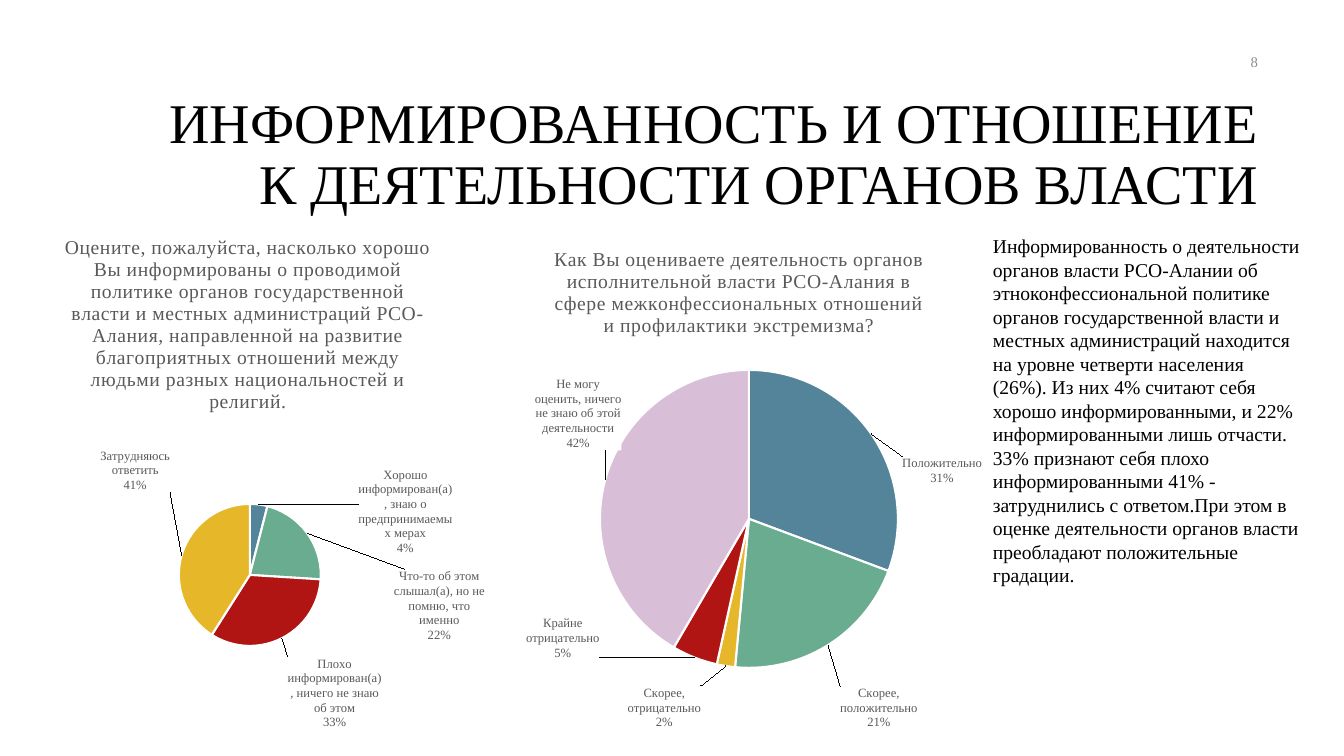
"""Builds the slide on awareness of and attitudes to public authorities."""
from copy import deepcopy
from dataclasses import dataclass

from lxml import etree
from pptx import Presentation
from pptx.chart.data import CategoryChartData
from pptx.dml.color import RGBColor
from pptx.enum.chart import XL_CHART_TYPE, XL_LABEL_POSITION
from pptx.enum.text import MSO_ANCHOR, MSO_AUTO_SIZE, PP_ALIGN
from pptx.oxml import parse_xml
from pptx.oxml.ns import nsdecls, qn
from pptx.util import Pt

EMU_PER_PX = 12192000 / 1344
FONT_NAME = "Times New Roman"
PIE = XL_CHART_TYPE.PIE
OUTSIDE_END = XL_LABEL_POSITION.OUTSIDE_END
RIGHT, CENTER, LEFT = PP_ALIGN.RIGHT, PP_ALIGN.CENTER, PP_ALIGN.LEFT
MIDDLE, TOP = MSO_ANCHOR.MIDDLE, MSO_ANCHOR.TOP
NO_AUTO_SIZE = MSO_AUTO_SIZE.NONE

BLACK = RGBColor(0x00, 0x00, 0x00)
WHITE = RGBColor(0xFF, 0xFF, 0xFF)
GRAY = RGBColor(0x8C, 0x8C, 0x8C)
DARK_GRAY = RGBColor(0x59, 0x59, 0x59)
BLUE = RGBColor(0x54, 0x84, 0x9A)
GREEN = RGBColor(0x6A, 0xAC, 0x90)
RED = RGBColor(0xB0, 0x15, 0x13)
YELLOW = RGBColor(0xE6, 0xB7, 0x29)
LILAC = RGBColor(0xD9, 0xBE, 0xD7)


@dataclass(frozen=True)
class Box:
    """A rectangle in px."""
    left: int
    top: int
    width: int
    height: int

    def emu(self) -> list[int]:
        """Return the rectangle in EMU."""
        return [px(value) for value in (self.left, self.top, self.width, self.height)]


@dataclass(frozen=True)
class Slice:
    """One answer, with the shift of its label in px."""
    answer: str
    percent: int
    color: RGBColor
    shift_x: int
    shift_y: int


@dataclass(frozen=True)
class Survey:
    """A survey question shown as a pie."""
    question: str
    box: Box
    pie: Box
    slices: tuple[Slice, ...]


@dataclass(frozen=True)
class Caption:
    """A formatted text with its place."""
    text: str
    box: Box
    size: float
    color: RGBColor
    alignment: PP_ALIGN
    anchor: MSO_ANCHOR
    line_spacing: float = 1.0


TITLE = Caption("ИНФОРМИРОВАННОСТЬ И ОТНОШЕНИЕ К ДЕЯТЕЛЬНОСТИ ОРГАНОВ ВЛАСТИ",
                Box(130, 85, 1138, 142), 40, BLACK, RIGHT, MIDDLE, 0.9)
CAPTIONS = (
    Caption("8", Box(966, 42, 302, 40), 10.5, GRAY, RIGHT, MIDDLE),
    Caption("Информированность о деятельности органов власти РСО-Алании об "
            "этноконфессиональной политике органов государственной власти и местных "
            "администраций находится на уровне четверти населения (26%). Из них 4% "
            "считают себя хорошо информированными, и 22% информированными лишь "
            "отчасти. 33% признают себя плохо информированными 41% - затруднились с "
            "ответом.При этом в оценке деятельности органов власти преобладают "
            "положительные градации.",
            Box(983, 229, 328, 367), 14, BLACK, LEFT, TOP),
)
SURVEYS = (
    Survey("Оцените, пожалуйста, насколько хорошо Вы информированы о проводимой "
           "политике органов государственной власти и местных администраций "
           "РСО-Алания, направленной на развитие благоприятных отношений между "
           "людьми разных национальностей и религий.",
           Box(11, 215, 474, 516), Box(179, 504, 142, 142), (
               Slice("Хорошо информирован(а), знаю о предпринимаемых мерах", 4, BLUE, 99, 57),
               Slice("Что-то об этом слышал(а), но не помню, что именно", 22, GREEN, 93, 113),
               Slice("Плохо информирован(а), ничего не знаю об этом", 33, RED, 3, 13),
               Slice("Затрудняюсь ответить", 41, YELLOW, -6, -61))),
    Survey("Как Вы оцениваете деятельность органов исполнительной власти РСО-Алания "
           "в сфере межконфессиональных отношений и профилактики экстремизма?",
           Box(495, 227, 488, 504), Box(600, 370, 298, 298), (
               Slice("Положительно", 31, BLUE, 26, 55),
               Slice("Скорее, положительно", 21, GREEN, 9, 36),
               Slice("Скорее, отрицательно", 2, YELLOW, -24, 14),
               Slice("Крайне отрицательно", 5, RED, -93, -47),
               Slice("Не могу оценить, ничего не знаю об этой деятельности",
                     42, LILAC, 22, -28))),
)


def px(value: int) -> int:
    """Turn px into EMU."""
    return round(value * EMU_PER_PX)


def set_attributes(target, values: dict) -> None:
    """Set each named attribute of the target."""
    for name, value in values.items():
        setattr(target, name, value)


def format_font(font, size: float, color: RGBColor) -> None:
    """Give a font its face, size and colour."""
    set_attributes(font, {"name": FONT_NAME, "size": Pt(size), "bold": False})
    font.color.rgb = color


def write_caption(shape, caption: Caption) -> None:
    """Place a shape and fill it with formatted text."""
    shape.left, shape.top, shape.width, shape.height = caption.box.emu()
    frame = shape.text_frame
    set_attributes(frame, {"word_wrap": True, "auto_size": NO_AUTO_SIZE,
                           "vertical_anchor": caption.anchor})
    paragraph = frame.paragraphs[0]
    set_attributes(paragraph, {"alignment": caption.alignment,
                               "line_spacing": caption.line_spacing})
    run = paragraph.add_run()
    run.text = caption.text
    format_font(run.font, caption.size, caption.color)


def layout_element(mode: str, **fractions: float) -> etree.ElementBase:
    """Return a manual chart layout."""
    items = "".join(f'<c:{name} val="{value:.4f}"/>' for name, value in fractions.items())
    return parse_xml(f'<c:layout {nsdecls("c")}><c:manualLayout>{mode}{items}'
                     '</c:manualLayout></c:layout>')


def place_pie(chart, survey: Survey) -> None:
    """Fix the pie within its chart frame."""
    plot_area = chart.element.find(".//" + qn("c:plotArea"))
    for layout in plot_area.findall(qn("c:layout")):
        plot_area.remove(layout)
    box, pie = survey.box, survey.pie
    mode = '<c:layoutTarget val="inner"/><c:xMode val="edge"/><c:yMode val="edge"/>'
    plot_area.insert(0, layout_element(
        mode, x=(pie.left - box.left) / box.width, y=(pie.top - box.top) / box.height,
        w=pie.width / box.width, h=pie.height / box.height))


def label_slices(series, survey: Survey) -> None:
    """Show answers and percentages, shifted slice by slice."""
    labels = series.data_labels
    set_attributes(labels, {"show_percentage": True, "show_category_name": True,
                            "show_value": False, "number_format": "0%",
                            "number_format_is_linked": False, "position": OUTSIDE_END})
    format_font(labels.font, 9, DARK_GRAY)
    element = labels._element
    element.find(qn("c:numFmt")).addnext(parse_xml(
        f'<c:spPr {nsdecls("c", "a")}><a:solidFill><a:srgbClr val="{WHITE}"/>'
        '</a:solidFill><a:ln><a:noFill/></a:ln></c:spPr>'))
    element.find(qn("c:showBubbleSize")).addnext(
        parse_xml(f'<c:separator {nsdecls("c")}>\n</c:separator>'))
    shared = [child for child in element if child.tag != qn("c:showLeaderLines")]
    for index, item in enumerate(survey.slices):
        label = parse_xml(f'<c:dLbl {nsdecls("c")}><c:idx val="{index}"/></c:dLbl>')
        label.append(layout_element("", x=item.shift_x / survey.box.width,
                                    y=item.shift_y / survey.box.height))
        label.extend([deepcopy(child) for child in shared])
        element.insert(index, label)


def add_survey(slide, survey: Survey) -> None:
    """Add the pie chart of a survey question."""
    data = CategoryChartData()
    data.categories = [item.answer for item in survey.slices]
    data.add_series(survey.question, [item.percent for item in survey.slices])
    chart = slide.shapes.add_chart(PIE, *survey.box.emu(), data).chart
    format_font(chart.font, 10, BLACK)
    set_attributes(chart, {"has_legend": False, "has_title": True})
    paragraph = chart.chart_title.text_frame.paragraphs[0]
    paragraph.alignment = CENTER
    run = paragraph.add_run()
    run.text = survey.question
    format_font(run.font, 14, DARK_GRAY)
    run.font._element.set("spc", "30")
    place_pie(chart, survey)
    plot = chart.plots[0]
    plot.vary_by_categories = True
    series = plot.series[0]
    for index, item in enumerate(survey.slices):
        slice_format = series.points[index].format
        slice_format.fill.solid()
        slice_format.fill.fore_color.rgb = item.color
        slice_format.line.color.rgb = WHITE
        slice_format.line.width = Pt(1.5)
    label_slices(series, survey)


def main() -> None:
    """Build and save the presentation."""
    presentation = Presentation()
    set_attributes(presentation, {"slide_width": px(1344), "slide_height": px(756)})
    slide = presentation.slides.add_slide(presentation.slide_layouts[5])
    write_caption(slide.shapes.title, TITLE)
    for survey in SURVEYS:
        add_survey(slide, survey)
    for caption in CAPTIONS:
        write_caption(slide.shapes.add_textbox(*caption.box.emu()), caption)
    presentation.save("out.pptx")


if __name__ == "__main__":
    main()
